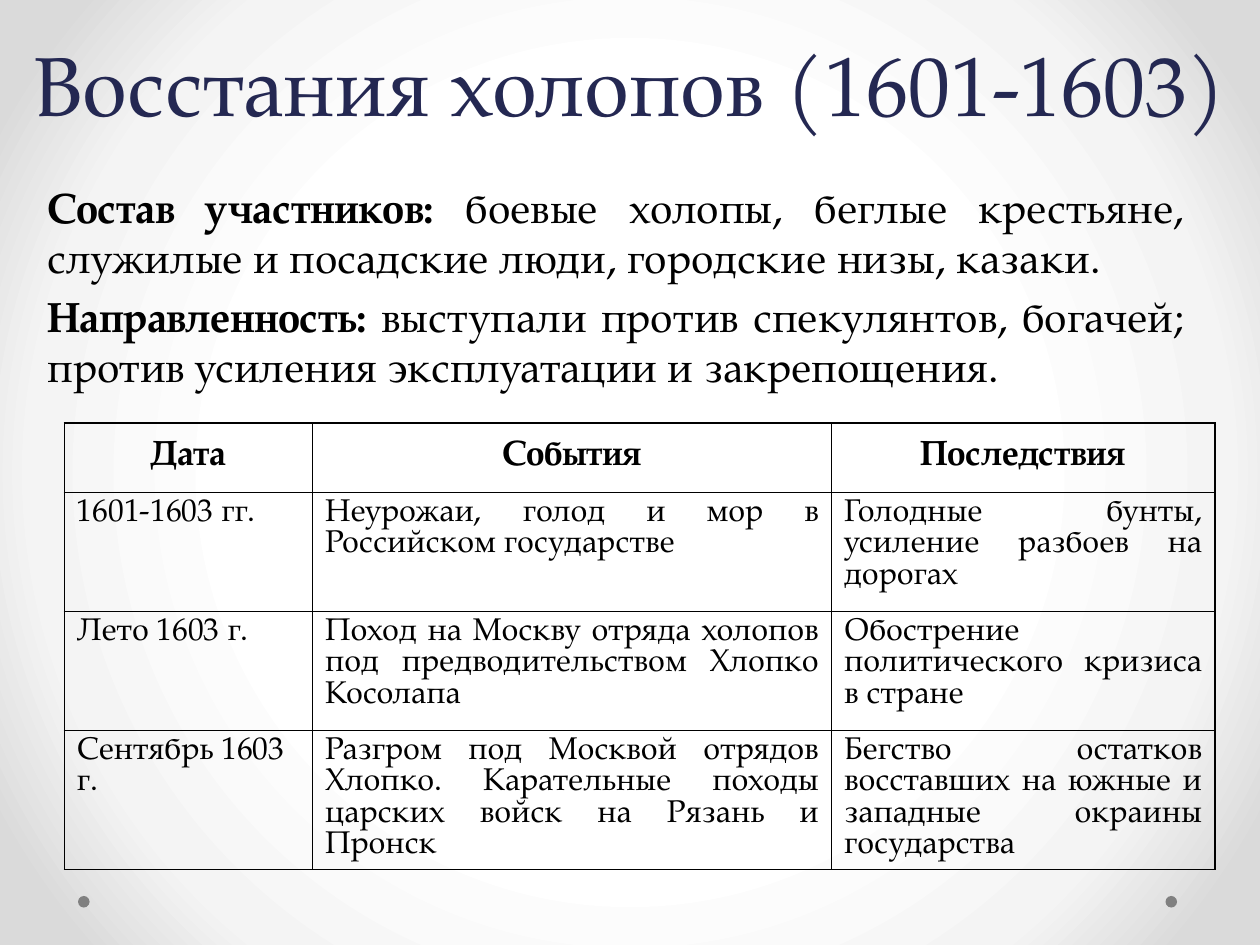
from lxml import etree
from pptx import Presentation
from pptx.dml.color import RGBColor
from pptx.enum import shapes, text
from pptx.oxml import parse_xml
from pptx.oxml import ns
from pptx.util import Pt

FONT = "TeX Gyre Pagella"
NAVY = RGBColor(0x24, 0x28, 0x52)
BLACK = RGBColor(0, 0, 0)
GREY = RGBColor(0x80, 0x80, 0x80)
GLOW = [(50, "FFFFFF"), (76, "F4F4F4"), (92, "DADADA")]
LEFT, CENTER, JUSTIFY = text.PP_ALIGN.LEFT, text.PP_ALIGN.CENTER, text.PP_ALIGN.JUSTIFY


def write(para, words, size=18, color=BLACK, bold=False, align=JUSTIFY, spacing=None):
    """Add a formatted span to a paragraph."""
    para.alignment = align
    if spacing:
        para.line_spacing = spacing
    span = para.add_run()
    span.text = words
    span.font.name = FONT
    span.font.size = Pt(size)
    span.font.bold = bold
    span.font.color.rgb = color


deck = Presentation()
deck.slide_width, deck.slide_height = Pt(720), Pt(540)
page = deck.slides.add_slide(deck.slide_layouts[1])

# Background: radial glow
fill = page.background.fill
fill.solid()
stops = "".join(
    f'<a:gs pos="{pos * 1000}"><a:srgbClr val="{color}"/></a:gs>' for pos, color in GLOW
)
glow = parse_xml(
    f'<a:gradFill {ns.nsdecls("a")} rotWithShape="1"><a:gsLst>{stops}</a:gsLst>'
    '<a:path path="circle"><a:fillToRect l="50000" t="50000" r="50000" b="50000"/></a:path>'
    "</a:gradFill>"
)
solid = page.background._cSld.find(".//" + ns.qn("a:solidFill"))
solid.getparent().replace(solid, glow)

# Corner dots
for left in (44.6, 666):
    dot = page.shapes.add_shape(
        shapes.MSO_SHAPE.OVAL, Pt(left), Pt(512), Pt(6.6), Pt(6.6)
    )
    dot.shadow.inherit = False
    dot.fill.solid()
    dot.fill.fore_color.rgb = GREY
    dot.line.fill.background()

# Title
title = page.shapes.title
title.left, title.top, title.width, title.height = Pt(8.6), Pt(0), Pt(702.8), Pt(94.5)
title.text_frame.auto_size = text.MSO_AUTO_SIZE.NONE
title.text_frame.vertical_anchor = text.MSO_ANCHOR.MIDDLE
write(title.text_frame.paragraphs[0], "Восстания холопов (1601-1603)",
      size=48, color=NAVY, align=CENTER, spacing=Pt(58))

# Body text without bullets
body = page.placeholders[1]
body.left, body.top, body.width, body.height = Pt(20), Pt(100), Pt(664), Pt(382)
frame = body.text_frame
frame.auto_size = text.MSO_AUTO_SIZE.NONE
points = [
    ("Состав участников:",
     " боевые холопы, беглые крестьяне, служилые и посадские люди, городские низы, казаки."),
    ("Направленность: ",
     "выступали против спекулянтов, богачей; против усиления эксплуатации и закрепощения."),
]
for index, (label, detail) in enumerate(points):
    para = frame.add_paragraph() if index else frame.paragraphs[0]
    write(para, label, size=24, bold=True)
    write(para, detail, size=24)
    para.space_before = Pt(4.8)
    props = para._p.get_or_add_pPr()
    props.set("marL", "0")
    props.set("indent", "0")
    etree.SubElement(props, ns.qn("a:buNone"))

# Table of events
rows = [
    ("Дата", "События", "Последствия"),
    ("1601-1603 гг.", "Неурожаи, голод и мор в Российском государстве",
     "Голодные бунты, усиление разбоев на дорогах"),
    ("Лето 1603 г.", "Поход на Москву отряда холопов под предводительством Хлопко Косолапа",
     "Обострение политического кризиса в стране"),
    ("Сентябрь 1603 г.",
     "Разгром под Москвой отрядов Хлопко. Карательные походы царских войск на Рязань и Пронск",
     "Бегство остатков восставших на южные и западные окраины государства"),
]
widths = [141.8, 296.6, 219]
heights = [39.6, 68, 68, 79.4]
table = page.shapes.add_table(
    len(rows), len(widths), Pt(36.8), Pt(241.8), Pt(sum(widths)), Pt(sum(heights))
).table
table.first_row = table.horz_banding = False
for column, width in zip(table.columns, widths):
    column.width = Pt(width)
for row, height in zip(table.rows, heights):
    row.height = Pt(height)

for r, row in enumerate(rows):
    for c, words in enumerate(row):
        cell = table.cell(r, c)
        para = cell.text_frame.paragraphs[0]
        if r == 0:
            cell.vertical_anchor = text.MSO_ANCHOR.MIDDLE
            write(para, words, size=20, bold=True, align=CENTER)
        else:
            write(para, words, align=JUSTIFY if c else LEFT, spacing=Pt(18))
        cell.fill.background()
        # Cell borders go before the fill
        props = cell._tc.get_or_add_tcPr()
        for place, side in enumerate(("lnL", "lnR", "lnT", "lnB")):
            props.insert(place, parse_xml(
                f'<a:{side} {ns.nsdecls("a")} w="{Pt(1)}"><a:solidFill>'
                f'<a:srgbClr val="{BLACK}"/></a:solidFill></a:{side}>'
            ))

deck.save("out.pptx")
